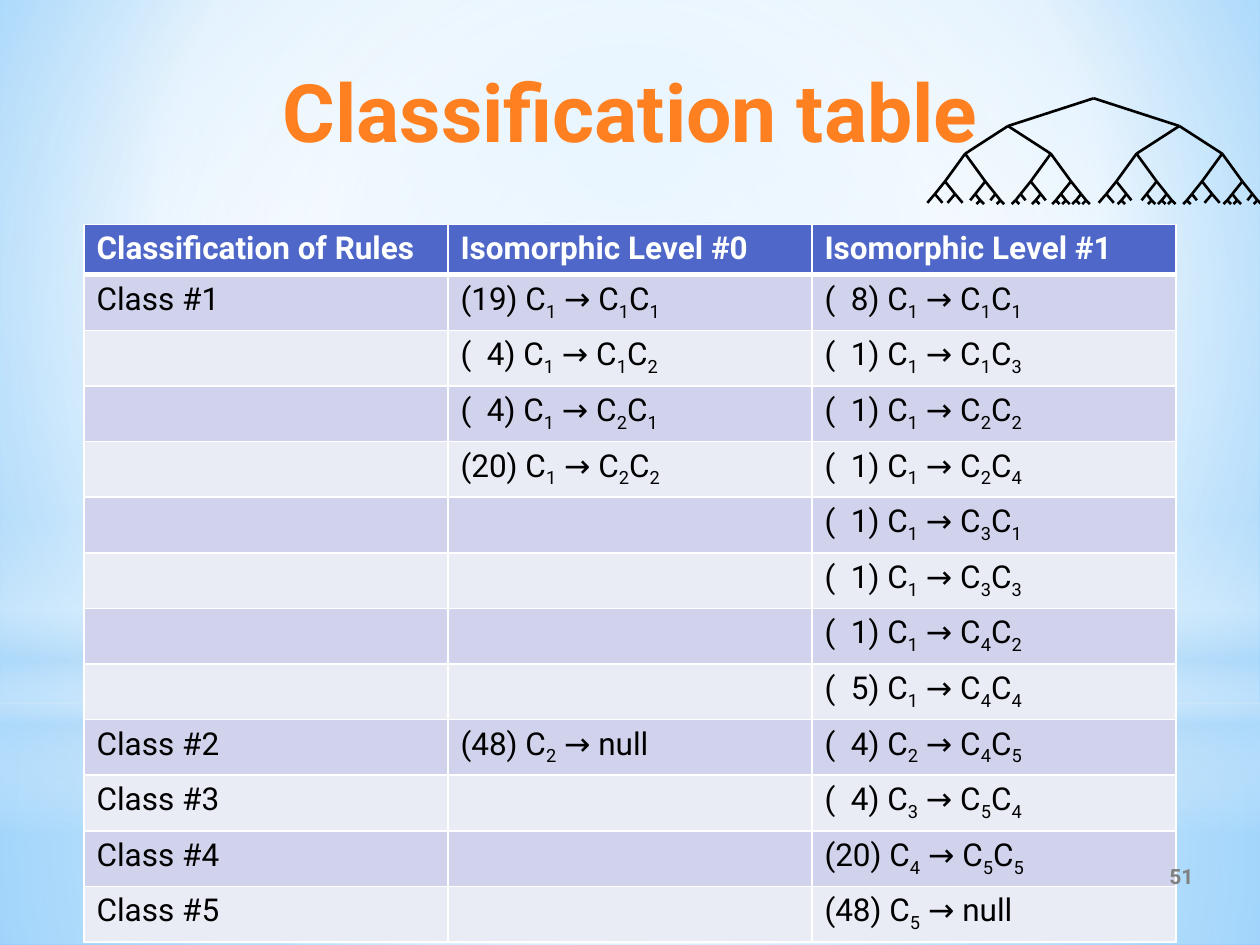
import lxml.etree
import pptx
import pptx.dml.color
import pptx.enum.shapes
import pptx.enum.text
import pptx.oxml.ns
import pptx.oxml.xmlchemy
import pptx.util

Inches, Pt = pptx.util.Inches, pptx.util.Pt
Color = pptx.dml.color.RGBColor
Align, Anchor = pptx.enum.text.PP_ALIGN, pptx.enum.text.MSO_ANCHOR
Shape = pptx.enum.shapes.MSO_SHAPE
qn = pptx.oxml.ns.qn

WIDTH, HEIGHT = 10, 7.5
FONT = "Roboto"
ORANGE = Color(0xFF, 0x80, 0x21)
GRAY = Color(0x80, 0x80, 0x80)
BLACK = Color(0, 0, 0)
WHITE = Color(0xFF, 0xFF, 0xFF)
HEADER_BLUE = Color(0x4E, 0x67, 0xC8)
BANDS = (Color(0xD0, 0xD3, 0xEB), Color(0xE9, 0xEB, 0xF5))
SKY, DEEP_SKY = Color(0x9E, 0xD5, 0xFF), Color(0x5B, 0xB9, 0xFF)
PALE_BLUE = Color(0xB4, 0xDC, 0xFA)

TITLE = "Classification table"
PAGE_NUMBER = "51"
HEADER = ("Classification of Rules", "Isomorphic Level #0", "Isomorphic Level #1")
RULES = [
    ("Class #1", "(19) C_1 → C_1C_1", "(  8) C_1 → C_1C_1"),
    ("", "(  4) C_1 → C_1C_2", "(  1) C_1 → C_1C_3"),
    ("", "(  4) C_1 → C_2C_1", "(  1) C_1 → C_2C_2"),
    ("", "(20) C_1 → C_2C_2", "(  1) C_1 → C_2C_4"),
    ("", "", "(  1) C_1 → C_3C_1"),
    ("", "", "(  1) C_1 → C_3C_3"),
    ("", "", "(  1) C_1 → C_4C_2"),
    ("", "", "(  5) C_1 → C_4C_4"),
    ("Class #2", "(48) C_2 → null", "(  4) C_2 → C_4C_5"),
    ("Class #3", "", "(  4) C_3 → C_5C_4"),
    ("Class #4", "", "(20) C_4 → C_5C_5"),
    ("Class #5", "", "(48) C_5 → null"),
]

CENTER = (50, 50, 50, 50)
BACKGROUND_STOPS = [(0, SKY, 100), (60, WHITE, 100), (100, DEEP_SKY, 100)]
LAYERS = [
    (Shape.RECTANGLE, 5.58, 1.92, CENTER,
     [(0, WHITE, 91), (37, WHITE, 76), (100, PALE_BLUE, 79)]),
    (Shape.RECTANGLE, 0, 5.58, CENTER,
     [(0, WHITE, 89), (48, WHITE, 62), (100, PALE_BLUE, 79)]),
    (Shape.RECTANGLE, 4.12, 2.5, None,
     [(0, WHITE, 0), (29, WHITE, 30), (45, PALE_BLUE, 40),
      (55, WHITE, 26), (65, PALE_BLUE, 60), (100, WHITE, 0)]),
    (Shape.OVAL, 1.75, 5.58, CENTER, [(0, WHITE, 100), (56, WHITE, 0)]),
]

TREE_ROOT = (8.68, 0.78)
TREE_LEVELS = [(0.68, 0.22), (0.34, 0.22), (0.16, 0.22), (0.08, 0.1)]
TWIG, TIP, BARE_TWIG = (0.04, 0.05), (0.03, 0.03), (0.06, 0.07)
TIPPED_SIDES = iter(["", "", "R", "R", "L", "L", "LR", "LR",
                     "", "L", "R", "LR", "L", "", "LR", "R"])


def set_gradient(properties, stops, focus):
    gradient = pptx.oxml.xmlchemy.OxmlElement("a:gradFill")
    stop_list = lxml.etree.SubElement(gradient, qn("a:gsLst"))
    for position, color, opacity in stops:
        stop = lxml.etree.SubElement(stop_list, qn("a:gs"), pos=str(position * 1000))
        tone = lxml.etree.SubElement(stop, qn("a:srgbClr"), val=str(color))
        if opacity < 100:
            lxml.etree.SubElement(tone, qn("a:alpha"), val=str(opacity * 1000))
    if focus:
        radial = lxml.etree.SubElement(gradient, qn("a:path"), path="circle")
        sides = {side: str(share * 1000) for side, share in zip("ltrb", focus)}
        lxml.etree.SubElement(radial, qn("a:fillToRect"), **sides)
    else:
        lxml.etree.SubElement(gradient, qn("a:lin"), ang="5400000", scaled="0")
    properties.replace(properties.find(qn("a:solidFill")), gradient)


def style_run(run, size, color, bold):
    run.font.name = FONT
    run.font.size = Pt(size)
    run.font.bold = bold
    run.font.color.rgb = color


def add_label(page, area, text, size, color, align):
    box = page.shapes.add_textbox(*map(Inches, area))
    box.text_frame.word_wrap = True
    box.text_frame.vertical_anchor = Anchor.MIDDLE
    box.text_frame.text = text
    para = box.text_frame.paragraphs[0]
    para.alignment = align
    style_run(para.runs[0], size, color, True)


def add_border(cell, side, points):
    line = lxml.etree.SubElement(cell._tc.get_or_add_tcPr(), qn("a:ln" + side),
                                 w=str(Pt(points)))
    fill = lxml.etree.SubElement(line, qn("a:solidFill"))
    lxml.etree.SubElement(fill, qn("a:srgbClr"), val=str(WHITE))


def fill_cell(cell, text, row):
    heavy_side = {0: "B", 1: "T"}.get(row)
    for side in "LRTB":
        add_border(cell, side, 3 if side == heavy_side else 1)
    cell.fill.solid()
    cell.fill.fore_color.rgb = BANDS[(row - 1) % 2] if row else HEADER_BLUE
    para = cell.text_frame.paragraphs[0]
    para.font.size = Pt(18)
    first, *rest = text.split("_")
    pieces = [(first, False)]
    for part in rest:
        pieces += [(part[0], True), (part[1:], False)]
    for piece, lowered in pieces:
        if piece:
            run = para.add_run()
            run.text = piece
            style_run(run, 18, BLACK if row else WHITE, row == 0)
            if lowered:
                run._r.get_or_add_rPr().set("baseline", "-25000")


def add_fork(tree, top, spread):
    ends = [(top[0] + sign * spread[0], top[1] + spread[1]) for sign in (-1, 1)]
    for end in ends:
        branch = tree.shapes.add_connector(
            pptx.enum.shapes.MSO_CONNECTOR.STRAIGHT, *map(Inches, top + end))
        branch.line.color.rgb = BLACK
        branch.line.width = Pt(1.5)
        lxml.etree.SubElement(branch._element.spPr, qn("a:effectLst"))
    return ends


def grow_tree(tree, top, level=0):
    if level < len(TREE_LEVELS):
        for end in add_fork(tree, top, TREE_LEVELS[level]):
            grow_tree(tree, end, level + 1)
        return
    tipped = next(TIPPED_SIDES)
    for side, end in zip("LR", add_fork(tree, top, TWIG if tipped else BARE_TWIG)):
        if side in tipped:
            add_fork(tree, end, TIP)


def main():
    deck = pptx.Presentation()
    deck.slide_width, deck.slide_height = Inches(WIDTH), Inches(HEIGHT)
    page = deck.slides.add_slide(deck.slide_layouts[6])

    page.background.fill.solid()
    set_gradient(page._element.find(".//" + qn("p:bgPr")), BACKGROUND_STOPS,
                 (20, 10, 20, 60))
    for kind, top, height, focus, stops in LAYERS:
        layer = page.shapes.add_shape(kind, 0, Inches(top), Inches(WIDTH), Inches(height))
        layer.shadow.inherit = False
        layer.line.fill.background()
        layer.fill.solid()
        set_gradient(layer._element.spPr, stops, focus)

    margin = WIDTH / 15
    content_width = WIDTH - 2 * margin
    add_label(page, (margin, 0.44, content_width, 0.87), TITLE, 46, ORANGE, Align.CENTER)

    rows = [HEADER] + RULES
    table = page.shapes.add_table(
        len(rows), len(HEADER), Inches(margin), Inches(1.78),
        Inches(content_width), Inches(0.4 * len(rows))).table
    for row, texts in enumerate(rows):
        table.rows[row].height = Inches(0.39)
        for column, text in enumerate(texts):
            fill_cell(table.cell(row, column), text, row)

    add_label(page, (7.57, 6.75, 2, 0.4), PAGE_NUMBER, 12, GRAY, Align.RIGHT)
    grow_tree(page.shapes.add_group_shape(), TREE_ROOT)
    deck.save("out.pptx")


if __name__ == "__main__":
    main()
